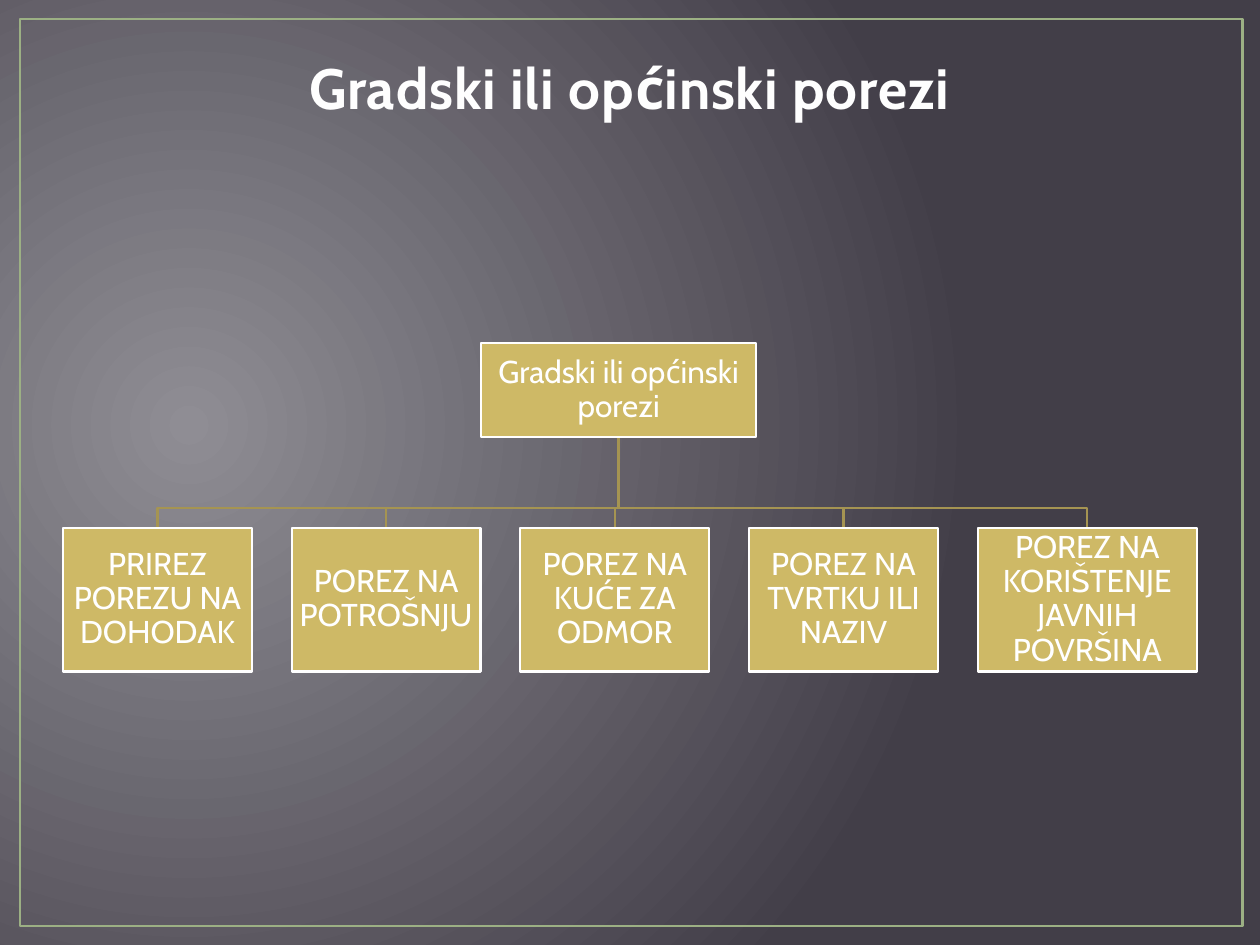
from dataclasses import dataclass

from lxml import etree
from pptx import Presentation
from pptx.dml.color import RGBColor
from pptx.enum import shapes, text
from pptx.oxml.ns import qn
from pptx.util import Inches, Pt


@dataclass(frozen=True)
class Theme:
    font: str = "Cabin"
    title_size: float = 32.4
    box_size: float = 18
    title: str = "FEFEFE"
    white: str = "FFFFFF"
    gold: str = "CEB966"
    branch: str = "A59452"
    frame: str = "9CB084"
    glow: str = "8F8D94"
    dusk: str = "423E48"
    thin: float = 1.25
    thick: float = 1.5


class Chart:
    def __init__(self, slide, theme):
        self.slide, self.theme = slide, theme

    def background(self):
        """Circular glow from the left, below the middle."""
        fill = self.slide.background.fill
        fill.gradient()
        for stop, color in zip(fill.gradient_stops, (self.theme.glow, self.theme.dusk)):
            stop.color.rgb = RGBColor.from_string(color)
        gradient = next(self.slide.element.iter(qn("a:gradFill")))
        linear = gradient.find(qn("a:lin"))
        circle = etree.Element(qn("a:path"), {"path": "circle"})
        etree.SubElement(circle, qn("a:fillToRect"),
                         l="15000", t="50000", r="85000", b="60000")
        gradient.replace(linear, circle)

    def outline(self, shape, color, width):
        shape.shadow.inherit = False
        shape.line.color.rgb = RGBColor.from_string(color)
        shape.line.width = Pt(width)

    def rectangle(self, bounds, color, width):
        rect = self.slide.shapes.add_shape(
            shapes.MSO_SHAPE.RECTANGLE, *map(Inches, bounds))
        rect.fill.background()
        self.outline(rect, color, width)
        return rect

    def label(self, frame, words, size, color):
        frame.word_wrap = True
        paragraph = frame.paragraphs[0]
        paragraph.text = words
        paragraph.alignment = text.PP_ALIGN.CENTER
        paragraph.font.name = self.theme.font
        paragraph.font.size = Pt(size)
        paragraph.font.color.rgb = RGBColor.from_string(color)
        return paragraph

    def title(self, words, bounds):
        frame = self.slide.shapes.add_textbox(*map(Inches, bounds)).text_frame
        frame.vertical_anchor = text.MSO_ANCHOR.BOTTOM
        frame.margin_bottom = Inches(0.59)
        heading = self.label(frame, words, self.theme.title_size, self.theme.title)
        heading.font.bold = True
        heading.runs[0].font._element.set("spc", "50")

    def box(self, words, bounds):
        rect = self.rectangle(bounds, self.theme.white, self.theme.thin)
        rect.fill.solid()
        rect.fill.fore_color.rgb = RGBColor.from_string(self.theme.gold)
        frame = rect.text_frame
        frame.vertical_anchor = text.MSO_ANCHOR.MIDDLE
        frame.margin_left = frame.margin_right = Inches(0.01)
        frame.margin_top = frame.margin_bottom = Inches(0.01)
        self.label(frame, words, self.theme.box_size, self.theme.white).line_spacing = 0.9

    def branch(self, start, end, bend):
        """Line from a parent down to the bend, across, and down to a child."""
        (x1, y1), (x2, y2) = start, end
        builder = self.slide.shapes.build_freeform(Inches(x1), Inches(y1))
        corners = [(x1, bend), (x2, bend), (x2, y2)]
        builder.add_line_segments(
            [(Inches(x), Inches(y)) for x, y in corners], close=False)
        line = builder.convert_to_shape()
        line.fill.background()
        self.outline(line, self.theme.branch, self.theme.thin)


def main():
    deck = Presentation()
    deck.slide_width, deck.slide_height = Inches(10), Inches(7.5)
    theme = Theme()
    chart = Chart(deck.slides.add_slide(deck.slide_layouts[6]), theme)
    chart.background()
    chart.rectangle((0.16, 0.15, 9.7, 7.2), theme.frame, theme.thick)

    heading = "Gradski ili općinski porezi"
    chart.title(heading, (0.5, 0.3, 9, 1.25))

    taxes = [
        ("PRIREZ POREZU NA DOHODAK", 1.5),
        ("POREZ NA POTROŠNJU", 1.5),
        ("POREZ NA KUĆE ZA ODMOR", 1.5),
        ("POREZ NA TVRTKU ILI NAZIV", 1.5),
        ("POREZ NA KORIŠTENJE JAVNIH POVRŠINA", 1.74),
    ]
    left, row_width, row_top, row_height = 0.5, 9, 4.19, 1.14
    gap = (row_width - sum(width for _, width in taxes)) / (len(taxes) - 1)
    tax_boxes = []
    for name, width in taxes:
        tax_boxes.append((name, (left, row_top, width, row_height)))
        left += width + gap

    root = (3.82, 2.72, 2.18, 0.75)
    root_foot = (root[0] + root[2] / 2, root[1] + root[3])
    for _, (x, y, width, _) in reversed(tax_boxes):
        chart.branch(root_foot, (x + width / 2, y), bend=4.03)
    chart.box(heading, root)
    for name, bounds in tax_boxes:
        chart.box(name, bounds)

    deck.save("out.pptx")


if __name__ == "__main__":
    main()
